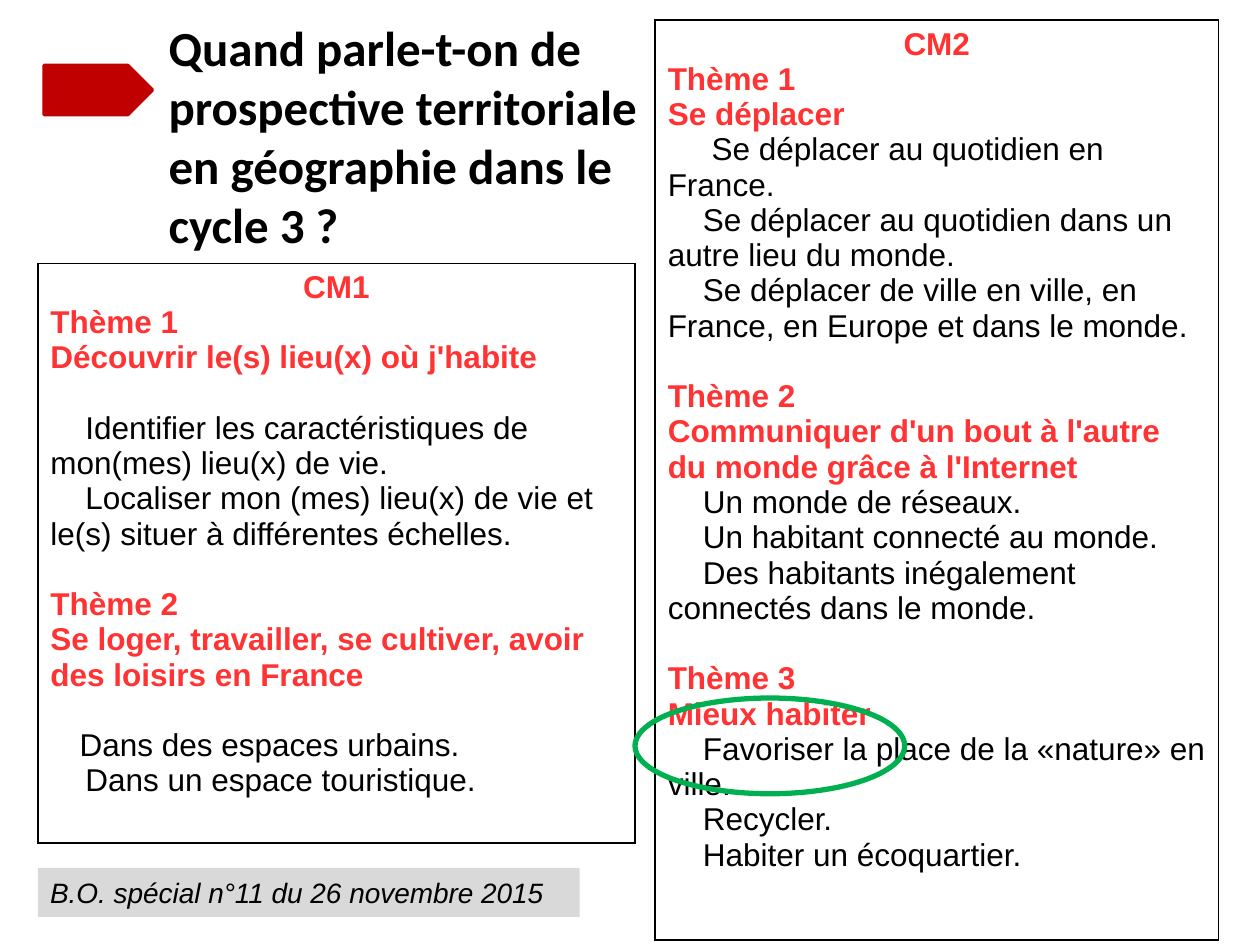
"""Builds the slide on territorial foresight in the cycle 3 geography syllabus."""
from dataclasses import dataclass

from lxml.etree import SubElement
from pptx import Presentation
from pptx.dml.color import RGBColor as Rgb
from pptx.enum.shapes import MSO_SHAPE as Preset
from pptx.enum.text import PP_ALIGN as Align
from pptx.oxml.ns import qn
from pptx.util import Pt

COLORS = {
    "text": "000000",
    "heading": "FF3333",
    "arrow": "C00000",
    "highlight": "00B050",
    "source": "D9D9D9",
    "border": "000000",
}
BODY_SIZE = 18
BLANK_LINE = 20.15


@dataclass
class Frame:
    left: float
    top: float
    width: float
    height: float

    def lengths(self) -> list:
        return [Pt(v) for v in (self.left, self.top, self.width, self.height)]


@dataclass
class Line:
    text: str
    heading: bool = False
    indent: float = 20
    gap: float = 0


@dataclass
class Level:
    name: str
    frame: Frame
    lines: list[Line]


def theme(number: int, title: str, *items: Line, gap: float = BLANK_LINE) -> list[Line]:
    return [Line(f"Thème {number}", True, 0, gap), Line(title, True, 0), *items]


LEVELS = [
    Level("CM1", Frame(21.6, 150.5, 341.3, 331.2), [
        *theme(1, "Découvrir le(s) lieu(x) où j'habite",
               Line("Identifier les caractéristiques de mon(mes) lieu(x) de vie.", gap=BLANK_LINE),
               Line("Localiser mon (mes) lieu(x) de vie et le(s) situer à différentes échelles."),
               gap=0),
        *theme(2, "Se loger, travailler, se cultiver, avoir des loisirs en France",
               Line("Dans des espaces urbains.", indent=16.7, gap=BLANK_LINE),
               Line("Dans un espace touristique.")),
    ]),
    Level("CM2", Frame(374.4, 11.5, 321.8, 525.6), [
        *theme(1, "Se déplacer",
               Line("Se déplacer au quotidien en France.", indent=25),
               Line("Se déplacer au quotidien dans un autre lieu du monde."),
               Line("Se déplacer de ville en ville, en France, en Europe et dans le monde."),
               gap=0),
        *theme(2, "Communiquer d'un bout à l'autre du monde grâce à l'Internet",
               Line("Un monde de réseaux."),
               Line("Un habitant connecté au monde."),
               Line("Des habitants inégalement connectés dans le monde.")),
        *theme(3, "Mieux habiter",
               Line("Favoriser la place de la «nature» en ville."),
               Line("Recycler."),
               Line("Habiter un écoquartier.")),
    ]),
]
TITLE_LINES = [
    "Quand parle-t-on de",
    "prospective territoriale",
    "en géographie dans le",
    "cycle 3 ?",
]


def add_span(para, text: str, size: float, color: str = "text", font: str = "Arial",
             bold: bool = False, italic: bool = False) -> None:
    span = para.add_run()
    span.text = text
    span.font.size = Pt(size)
    span.font.name = font
    span.font.bold = bold
    span.font.italic = italic
    span.font.color.rgb = Rgb.from_string(COLORS[color])


def add_borders(cell) -> None:
    properties = cell._tc.get_or_add_tcPr()
    for side in ("lnL", "lnR", "lnT", "lnB"):
        edge = SubElement(properties, qn(f"a:{side}"), w=str(Pt(0.96)))
        fill = SubElement(edge, qn("a:solidFill"))
        SubElement(fill, qn("a:srgbClr"), val=COLORS["border"])


def add_level(page, level: Level) -> None:
    table = page.shapes.add_table(1, 1, *level.frame.lengths()).table
    table.first_row = False
    table.horz_banding = False
    cell = table.cell(0, 0)
    add_borders(cell)
    cell.fill.background()
    name = cell.text_frame.paragraphs[0]
    name.alignment = Align.CENTER
    add_span(name, level.name, BODY_SIZE, "heading", bold=True)
    for line in level.lines:
        para = cell.text_frame.add_paragraph()
        para.alignment = Align.LEFT
        para.space_before = Pt(line.gap)
        properties = para._p.get_or_add_pPr()
        properties.set("marL", "0")
        properties.set("indent", str(Pt(line.indent)))
        add_span(para, line.text, BODY_SIZE, "heading" if line.heading else "text",
                 bold=line.heading)


def add_box(page, preset: Preset, frame: Frame, fill: str | None = None,
            outline: str | None = None, weight: float = 0):
    box = page.shapes.add_shape(preset, *frame.lengths())
    box.shadow.inherit = False
    if fill:
        box.fill.solid()
        box.fill.fore_color.rgb = Rgb.from_string(COLORS[fill])
    else:
        box.fill.background()
    if outline:
        box.line.color.rgb = Rgb.from_string(COLORS[outline])
        box.line.width = Pt(weight)
    else:
        box.line.fill.background()
    return box


def add_source(page) -> None:
    box = add_box(page, Preset.RECTANGLE, Frame(21.6, 496, 309.6, 28), "source")
    para = box.text_frame.paragraphs[0]
    para.alignment = Align.LEFT
    add_span(para, "B.O. spécial n°11 du 26 novembre 2015", 16, italic=True)


def add_title(page) -> None:
    box = page.shapes.add_textbox(*Frame(89.3, 6.5, 695.5, 144).lengths())
    box.text_frame.word_wrap = True
    for index, text in enumerate(TITLE_LINES):
        para = box.text_frame.add_paragraph() if index else box.text_frame.paragraphs[0]
        add_span(para, text, 28, font="Calibri", bold=True)


def main() -> None:
    deck = Presentation()
    deck.slide_width, deck.slide_height = Pt(720), Pt(540)
    page = deck.slides.add_slide(deck.slide_layouts[6])
    first_level, second_level = LEVELS
    add_level(page, first_level)
    add_source(page)
    add_level(page, second_level)
    add_box(page, Preset.OVAL, Frame(362.9, 398.9, 154.1, 54.7), outline="highlight", weight=3)
    add_title(page)
    add_box(page, Preset.PENTAGON, Frame(25.2, 37.4, 61.9, 28.1), "arrow", "arrow", 2)
    deck.save("out.pptx")


if __name__ == "__main__":
    main()
